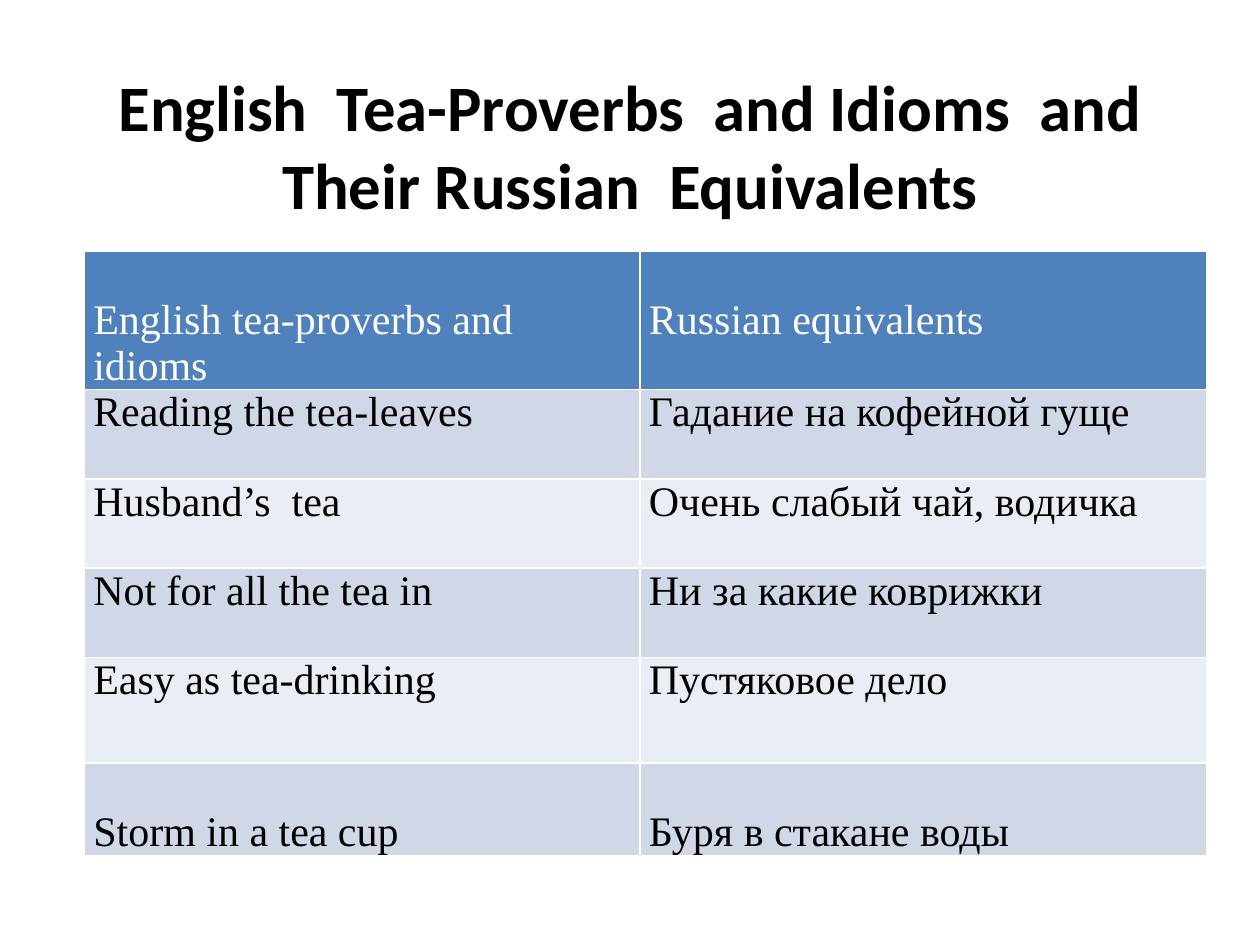
from lxml import etree
from pptx import Presentation
from pptx.dml.color import RGBColor
from pptx.enum.text import MSO_ANCHOR, PP_ALIGN
from pptx.oxml.ns import qn
from pptx.util import Cm, Pt

MIDDLE = MSO_ANCHOR.MIDDLE
CENTER = PP_ALIGN.CENTER

HUES = {"head": "4F81BD", "odd": "D0D8E8", "even": "E9EDF4",
        "white": "FFFFFF", "black": "000000"}
TITLE = "English  Tea-Proverbs  and Idioms  and Their Russian  Equivalents"
# English text, Russian text, row height, gap above the text (cm)
ROWS = [
    ("English tea-proverbs and idioms", "Russian equivalents", 2.78, 0.92),
    ("Reading the tea-leaves", "Гадание на кофейной гуще", 1.8, 0),
    ("Husband’s  tea", "Очень слабый чай, водичка", 1.8, 0),
    ("Not for all the tea in", "Ни за какие коврижки", 1.8, 0),
    ("Easy as tea-drinking", "Пустяковое дело", 2.13, 0),
    ("Storm in a tea cup", "Буря в стакане воды", 1.86, 0.92),
]
SPLIT = 0.495  # share of the table width held by the English column


def style(font, hue, **form):
    for key, value in form.items():
        setattr(font, key, value)
    font.color.rgb = RGBColor.from_string(HUES[hue])


def rule_cell(cell):
    """Draw thin white borders; they must precede the fill in the XML."""
    props = cell._tc.get_or_add_tcPr()
    for spot, tag in enumerate(("a:lnL", "a:lnR", "a:lnT", "a:lnB")):
        line = etree.Element(qn(tag), w=str(Pt(1)))
        fill = etree.SubElement(line, qn("a:solidFill"))
        etree.SubElement(fill, qn("a:srgbClr"), val=HUES["white"])
        props.insert(spot, line)


def fill_cell(cell, text, back, hue, gap):
    margins = {"margin_left": Cm(0.18), "margin_right": Cm(0.18),
               "margin_top": Cm(gap), "margin_bottom": 0}
    for key, value in margins.items():
        setattr(cell, key, value)
    cell.fill.solid()
    cell.fill.fore_color.rgb = RGBColor.from_string(HUES[back])
    rule_cell(cell)
    run = cell.text_frame.paragraphs[0].add_run()
    run.text = text
    style(run.font, hue, name="Times New Roman", size=Pt(24), bold=False)


def add_pairs(slide, left, top, width):
    high = sum(row[2] for row in ROWS)
    table = slide.shapes.add_table(len(ROWS), 2, Cm(left), Cm(top),
                                   Cm(width), Cm(high)).table
    for col, share in zip(table.columns, (SPLIT, 1 - SPLIT)):
        col.width = Cm(width * share)
    for r, (*texts, tall, gap) in enumerate(ROWS):
        table.rows[r].height = Cm(tall)
        back = "head" if r == 0 else "odd" if r % 2 else "even"
        hue = "white" if r == 0 else "black"
        for c, text in enumerate(texts):
            fill_cell(table.cell(r, c), text, back, hue, gap)


def add_title(slide, left, top, width, height):
    box = slide.shapes.add_textbox(Cm(left), Cm(top), Cm(width), Cm(height))
    frame = box.text_frame
    frame.word_wrap = True
    frame.vertical_anchor = MIDDLE
    para = frame.paragraphs[0]
    para.alignment = CENTER
    run = para.add_run()
    run.text = TITLE
    style(run.font, "black", name="Calibri", size=Pt(37), bold=True)


def main():
    deck = Presentation()
    deck.slide_width, deck.slide_height = Cm(25.4), Cm(19.05)
    slide = deck.slides.add_slide(deck.slide_layouts[6])
    add_pairs(slide, 1.7, 5.06, 22.63)
    add_title(slide, 1.27, 1.12, 22.86, 3.58)
    deck.save("out.pptx")


if __name__ == "__main__":
    main()
